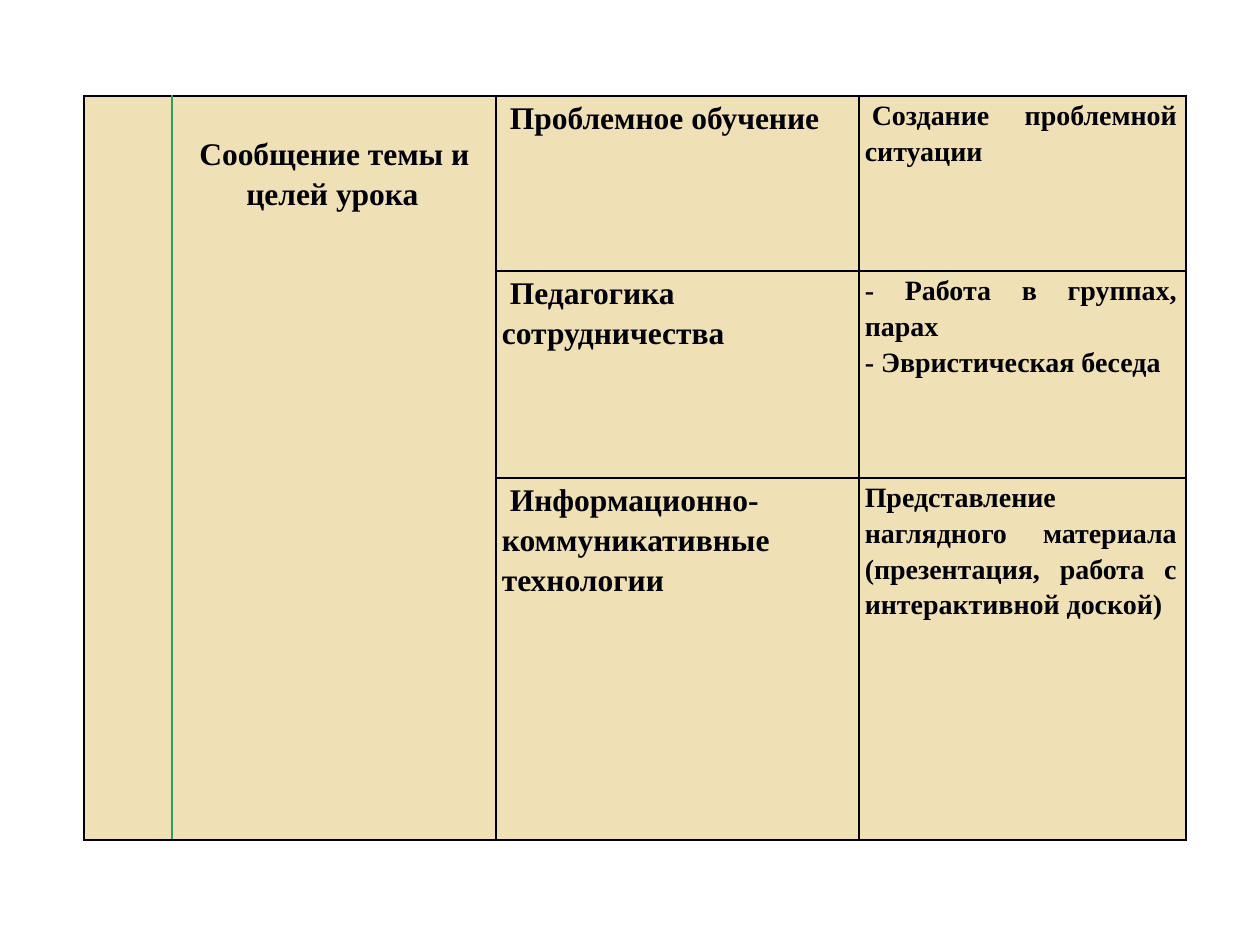
from dataclasses import dataclass

from lxml.etree import SubElement
from pptx import Presentation
from pptx.dml.color import RGBColor
from pptx.enum.text import PP_ALIGN
from pptx.oxml.ns import qn
from pptx.util import Emu, Pt


@dataclass(frozen=True)
class Theme:
    font: str = "Times New Roman"
    ink: str = "00000A"
    paper: str = "F0E0B5"
    accent: str = "339966"
    heading: int = 18
    detail: int = 16
    border: float = 1.5
    line_spacing: float = 1.15


@dataclass(frozen=True)
class Entry:
    row: int
    column: int
    lines: tuple[str, ...]
    size: int
    indent: int = 0
    top: int = 0
    align: PP_ALIGN = PP_ALIGN.JUSTIFY


THEME = Theme()

# Layout in px
PAGE_WIDTH, PAGE_HEIGHT = 1260, 945
TABLE_LEFT, TABLE_TOP = 84, 96
COLUMNS = (88, 324, 363, 327)
ROWS = (175, 207, 362)
MERGED_COLUMNS = (0, 1)
ACCENT_SIDES = {(0, "R"), (1, "L")}

ENTRIES = (
    Entry(0, 1, ("Сообщение темы и целей урока",), THEME.heading,
          indent=4, top=36, align=PP_ALIGN.CENTER),
    Entry(0, 2, ("Проблемное обучение",), THEME.heading, indent=8),
    Entry(1, 2, ("Педагогика сотрудничества",), THEME.heading, indent=8),
    Entry(2, 2, ("Информационно-коммуникативные технологии",), THEME.heading, indent=8),
    Entry(0, 3, ("Создание проблемной ситуации",), THEME.detail, indent=7),
    Entry(1, 3, ("- Работа в группах, парах", "- Эвристическая беседа"), THEME.detail),
    Entry(2, 3, ("Представление наглядного материала (презентация, "
                 "работа с интерактивной доской)",), THEME.detail),
)


def px(length: int) -> Emu:
    return Emu(round(length * 914400 / 126))


def apply_format(target, values: dict) -> None:
    for name, value in values.items():
        setattr(target, name, value)


def style_cell(cell, column: int) -> None:
    properties = cell._tc.get_or_add_tcPr()
    for side in "LRTB":
        line = SubElement(properties, qn(f"a:ln{side}"), w=str(Pt(THEME.border)))
        color = THEME.accent if (column, side) in ACCENT_SIDES else THEME.ink
        SubElement(SubElement(line, qn("a:solidFill")), qn("a:srgbClr"), val=color)
    cell.fill.solid()
    cell.fill.fore_color.rgb = RGBColor.from_string(THEME.paper)
    apply_format(cell, {"margin_left": px(6), "margin_right": px(9),
                        "margin_top": 0, "margin_bottom": 0})


def write_entry(table, entry: Entry) -> None:
    cell = table.cell(entry.row, entry.column)
    cell.margin_top = px(entry.top)
    frame = cell.text_frame
    for index, line in enumerate(entry.lines):
        para = frame.add_paragraph() if index else frame.paragraphs[0]
        apply_format(para, {"alignment": entry.align,
                            "line_spacing": THEME.line_spacing})
        para._p.get_or_add_pPr().set("indent", str(px(entry.indent)))
        span = para.add_run()
        span.text = line
        apply_format(span.font, {"name": THEME.font, "size": Pt(entry.size), "bold": True})
        span.font.color.rgb = RGBColor.from_string(THEME.ink)


def build_table(page) -> None:
    table = page.shapes.add_table(
        len(ROWS), len(COLUMNS), px(TABLE_LEFT), px(TABLE_TOP),
        px(sum(COLUMNS)), px(sum(ROWS))).table
    apply_format(table, {"first_row": False, "horz_banding": False})

    # Grid sizes
    for column, width in zip(table.columns, COLUMNS):
        column.width = px(width)
    for row, height in zip(table.rows, ROWS):
        row.height = px(height)

    # Fills, borders and merged columns
    for row in range(len(ROWS)):
        for column in range(len(COLUMNS)):
            style_cell(table.cell(row, column), column)
    for column in MERGED_COLUMNS:
        table.cell(0, column).merge(table.cell(len(ROWS) - 1, column))

    # Wording
    for entry in ENTRIES:
        write_entry(table, entry)


def main() -> None:
    deck = Presentation()
    apply_format(deck, {"slide_width": px(PAGE_WIDTH), "slide_height": px(PAGE_HEIGHT)})
    page = deck.slides.add_slide(deck.slide_layouts[6])
    build_table(page)
    deck.save("out.pptx")


if __name__ == "__main__":
    main()
